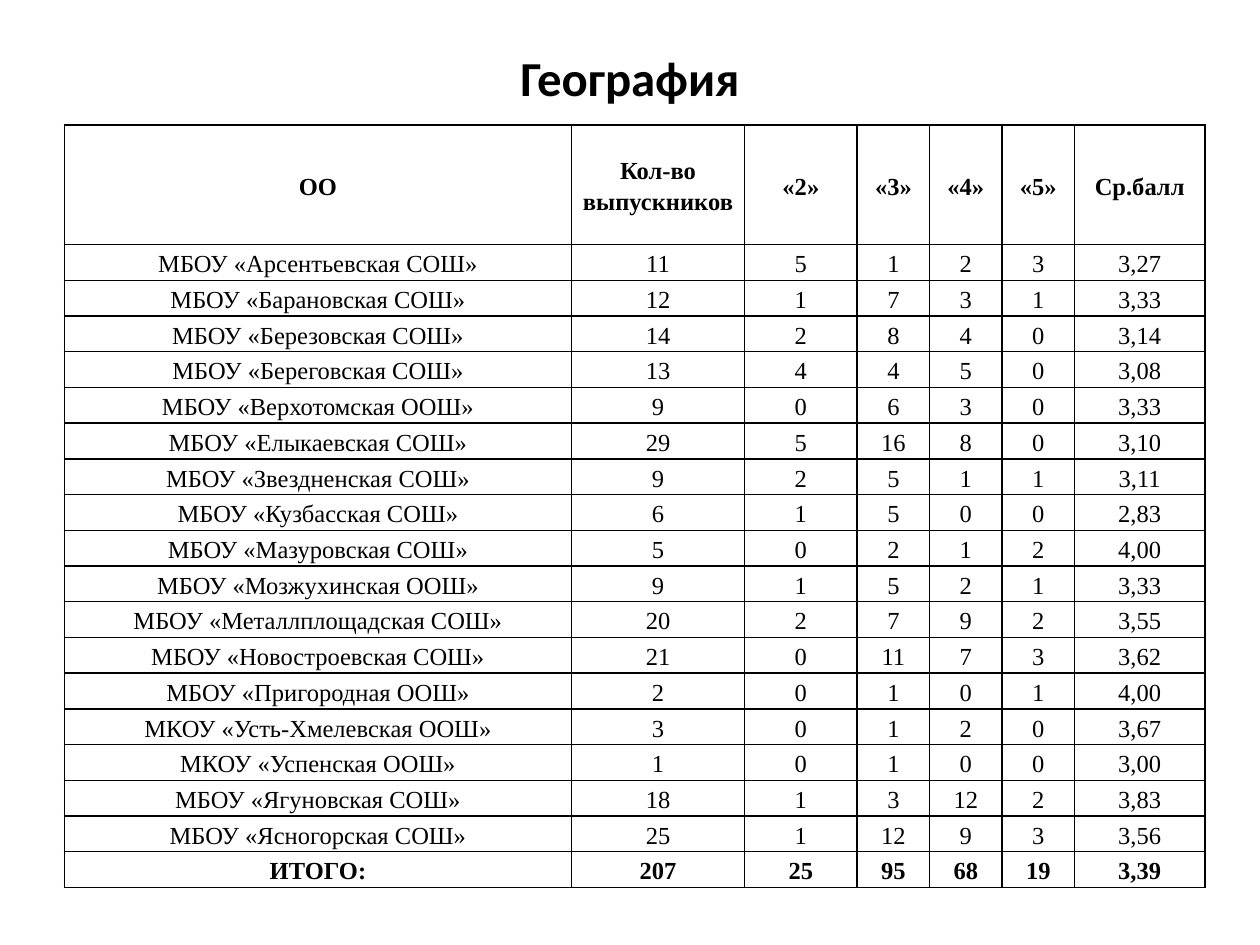
from dataclasses import dataclass

from lxml import etree
from pptx import Presentation
from pptx.dml.color import RGBColor
from pptx.enum.text import MSO_ANCHOR, PP_ALIGN
from pptx.oxml.ns import qn
from pptx.util import Cm, Pt

CENTER = PP_ALIGN.CENTER
TOP, MIDDLE = MSO_ANCHOR.TOP, MSO_ANCHOR.MIDDLE
BLANK_LAYOUT = 6


@dataclass(frozen=True)
class Theme:
    ink: str = "000000"
    title_font: str = "Calibri"
    table_font: str = "Times New Roman"
    title_size: float = 27.9
    table_size: float = 14
    line_spacing: float = 1.15
    border_width: float = 1


COLUMN_WIDTHS = [10.22, 3.49, 2.27, 1.46, 1.46, 1.46, 2.63]
HEADER_HEIGHT = 2.41
ROW_HEIGHT = 0.72

HEADER = ["ОО", "Кол-во выпускников", "«2»", "«3»", "«4»", "«5»", "Ср.балл"]
SCHOOLS = [
    ["МБОУ «Арсентьевская СОШ»", 11, 5, 1, 2, 3, "3,27"],
    ["МБОУ «Барановская СОШ»", 12, 1, 7, 3, 1, "3,33"],
    ["МБОУ «Березовская СОШ»", 14, 2, 8, 4, 0, "3,14"],
    ["МБОУ «Береговская СОШ»", 13, 4, 4, 5, 0, "3,08"],
    ["МБОУ «Верхотомская ООШ»", 9, 0, 6, 3, 0, "3,33"],
    ["МБОУ «Елыкаевская СОШ»", 29, 5, 16, 8, 0, "3,10"],
    ["МБОУ «Звездненская СОШ»", 9, 2, 5, 1, 1, "3,11"],
    ["МБОУ «Кузбасская СОШ»", 6, 1, 5, 0, 0, "2,83"],
    ["МБОУ «Мазуровская СОШ»", 5, 0, 2, 1, 2, "4,00"],
    ["МБОУ «Мозжухинская ООШ»", 9, 1, 5, 2, 1, "3,33"],
    ["МБОУ «Металлплощадская СОШ»", 20, 2, 7, 9, 2, "3,55"],
    ["МБОУ «Новостроевская СОШ»", 21, 0, 11, 7, 3, "3,62"],
    ["МБОУ «Пригородная ООШ»", 2, 0, 1, 0, 1, "4,00"],
    ["МКОУ «Усть-Хмелевская ООШ»", 3, 0, 1, 2, 0, "3,67"],
    ["МКОУ «Успенская ООШ»", 1, 0, 1, 0, 0, "3,00"],
    ["МБОУ «Ягуновская СОШ»", 18, 1, 3, 12, 2, "3,83"],
    ["МБОУ «Ясногорская СОШ»", 25, 1, 12, 9, 3, "3,56"],
]
TOTAL = ["ИТОГО:", 207, 25, 95, 68, 19, "3,39"]


def apply_format(target, values):
    for name, value in values.items():
        setattr(target, name, value)


class SlideBuilder:
    """Draws elements on one slide in the style of the theme."""

    def __init__(self, slide, theme):
        self.slide = slide
        self.theme = theme

    def centered_text(self, para, text, **font_values):
        para.alignment = CENTER
        span = para.add_run()
        span.text = str(text)
        apply_format(span.font, font_values)
        span.font.color.rgb = RGBColor.from_string(self.theme.ink)

    def title(self, text, left, top, width, height):
        box = self.slide.shapes.add_textbox(Cm(left), Cm(top), Cm(width), Cm(height))
        frame = box.text_frame
        apply_format(frame, {"word_wrap": True, "vertical_anchor": TOP,
                             "margin_top": Cm(0.21)})
        self.centered_text(frame.paragraphs[0], text, name=self.theme.title_font,
                           size=Pt(self.theme.title_size), bold=True)

    def table(self, rows, left, top, widths, heights):
        """Adds a ruled table whose first and last rows are bold."""
        frame = self.slide.shapes.add_table(
            len(rows), len(widths), Cm(left), Cm(top), Cm(sum(widths)), Cm(sum(heights)))
        table = frame.table
        table.horz_banding = False
        for column, width in zip(table.columns, widths):
            column.width = Cm(width)
        for row, height in zip(table.rows, heights):
            row.height = Cm(height)
        for index, values in enumerate(rows):
            bold = index in (0, len(rows) - 1)
            for cell, text in zip(table.rows[index].cells, values):
                self.cell(cell, text, bold)

    def cell(self, cell, text, bold):
        apply_format(cell, {"vertical_anchor": MIDDLE,
                            "margin_left": Cm(0.15), "margin_right": Cm(0.15),
                            "margin_top": 0, "margin_bottom": 0})
        self.borders(cell)
        cell.fill.background()
        para = cell.text_frame.paragraphs[0]
        para.line_spacing = self.theme.line_spacing
        self.centered_text(para, text, name=self.theme.table_font,
                           size=Pt(self.theme.table_size), bold=bold)

    def borders(self, cell):
        properties = cell._tc.get_or_add_tcPr()
        for side in ("a:lnL", "a:lnR", "a:lnT", "a:lnB"):
            line = etree.SubElement(properties, qn(side),
                                    w=str(Pt(self.theme.border_width)))
            fill = etree.SubElement(line, qn("a:solidFill"))
            etree.SubElement(fill, qn("a:srgbClr"), val=self.theme.ink)


def main():
    deck = Presentation()
    deck.slide_width, deck.slide_height = Cm(25.4), Cm(19.05)
    page = deck.slides.add_slide(deck.slide_layouts[BLANK_LAYOUT])
    builder = SlideBuilder(page, Theme())

    builder.title("География", 1.27, 0.76, 22.86, 3.18)
    rows = [HEADER, *SCHOOLS, TOTAL]
    heights = [HEADER_HEIGHT] + [ROW_HEIGHT] * (len(rows) - 1)
    builder.table(rows, 1.3, 2.52, COLUMN_WIDTHS, heights)

    deck.save("out.pptx")


if __name__ == "__main__":
    main()
